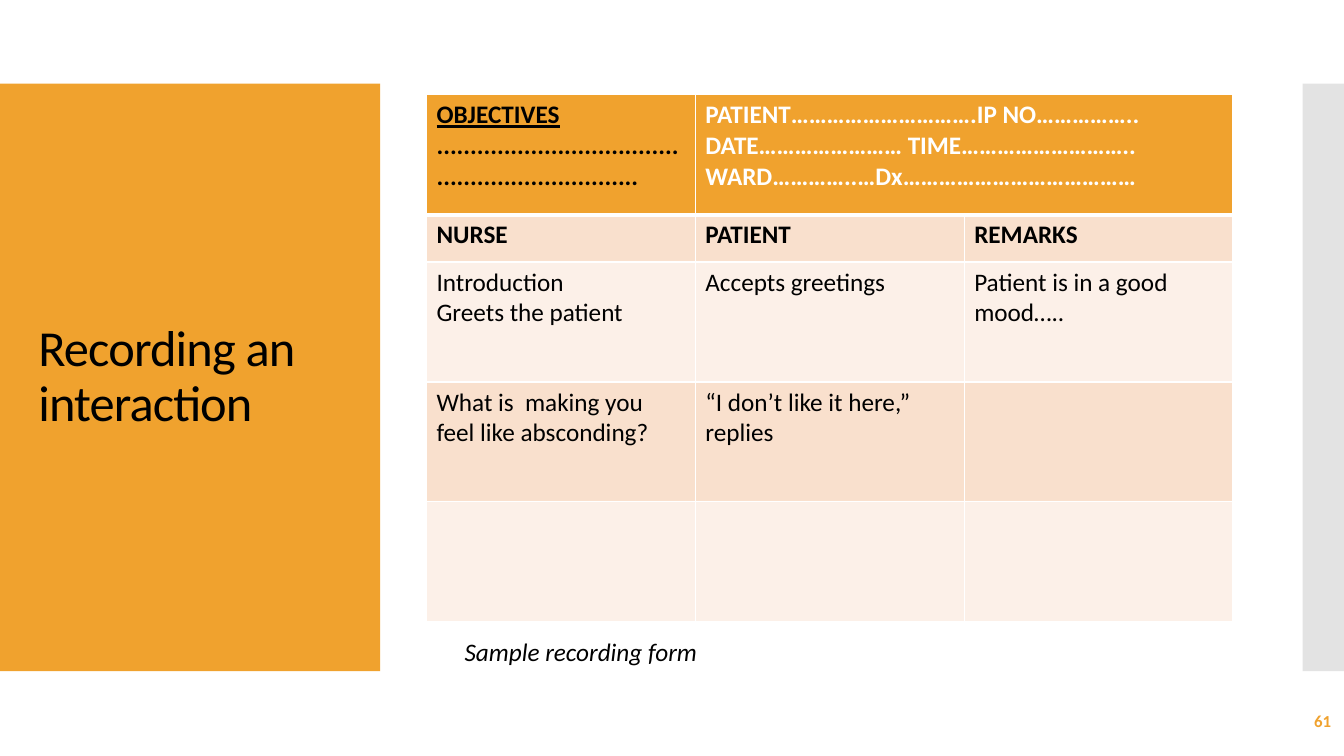
from lxml import etree
from pptx import Presentation
from pptx.dml.color import RGBColor
from pptx.enum.shapes import MSO_SHAPE
from pptx.enum.text import MSO_ANCHOR, PP_ALIGN
from pptx.oxml.ns import qn
from pptx.util import Inches, Pt

RECTANGLE = MSO_SHAPE.RECTANGLE
TOP, MIDDLE = MSO_ANCHOR.TOP, MSO_ANCHOR.MIDDLE
LEFT, RIGHT = PP_ALIGN.LEFT, PP_ALIGN.RIGHT
TITLE_ONLY = 5

ORANGE = RGBColor(0xF0, 0xA2, 0x2E)
GREY = RGBColor(0xC8, 0xC8, 0xC8)
PEACH = RGBColor(0xF9, 0xE0, 0xCD)
PALE_PEACH = RGBColor(0xFC, 0xF0, 0xE8)
BLACK = RGBColor(0, 0, 0)
WHITE = RGBColor(0xFF, 0xFF, 0xFF)

TITLE = "Recording an interaction"
CAPTION = "Sample recording form"
PAGE_NUMBER = "61"
FORM = [
    [["OBJECTIVES", ".................................................................."],
     ["PATIENT………………………….IP NO……………..",
      "DATE…………………… TIME………………………..",
      "WARD…………..…Dx…………………………………"],
     []],
    [["NURSE"], ["PATIENT"], ["REMARKS"]],
    [["Introduction", "Greets the patient"], ["Accepts greetings"],
     ["Patient is in a good mood….."]],
    [["What is  making you feel like absconding?"],
     ["“I don’t like it here,” replies"], []],
    [[], [], []],
]
COLUMN_WIDTH = 8 / 3
ROW_HEIGHTS = [1.19, 0.47, 1.19, 1.19, 1.19]
PANELS = [(0, 3.77, ORANGE, 100), (12.92, 0.42, GREY, 50)]


def set_font(font, color=BLACK, **values):
    font.color.rgb = color
    for name, value in {"name": "Calibri", "size": Pt(18), **values}.items():
        setattr(font, name, value)


def fill_frame(frame, lines, align=LEFT, **font_values):
    for index, line in enumerate(lines):
        para = frame.paragraphs[0] if index == 0 else frame.add_paragraph()
        para.alignment = align
        span = para.add_run()
        span.text = line
        set_font(span.font, **font_values)


def add_panel(page, left, width, color, opacity):
    panel = page.shapes.add_shape(
        RECTANGLE, Inches(left), Inches(0.83), Inches(width), Inches(5.83))
    panel.shadow.inherit = False
    panel.fill.solid()
    panel.fill.fore_color.rgb = color
    panel.line.fill.background()
    if opacity < 100:
        swatch = panel.fill._xPr.find(".//" + qn("a:srgbClr"))
        etree.SubElement(swatch, qn("a:alpha"), val=str(opacity * 1000))


def set_borders(cell, bottom_width):
    properties = cell._tc.get_or_add_tcPr()
    widths = {"lnL": 1, "lnR": 1, "lnT": 1, "lnB": bottom_width}
    for index, (side, width) in enumerate(widths.items()):
        line = etree.Element(qn("a:" + side), w=str(Pt(width)))
        fill = etree.SubElement(line, qn("a:solidFill"))
        etree.SubElement(fill, qn("a:srgbClr"), val=str(WHITE))
        properties.insert(index, line)


def add_form(page):
    table = page.shapes.add_table(
        len(FORM), len(FORM[0]), Inches(4.23), Inches(0.94),
        Inches(8), Inches(sum(ROW_HEIGHTS))).table
    for column in table.columns:
        column.width = Inches(COLUMN_WIDTH)
    for row_index, row in enumerate(FORM):
        table.rows[row_index].height = Inches(ROW_HEIGHTS[row_index])
        header = row_index == 0
        band = PEACH if row_index % 2 else PALE_PEACH
        for column_index, lines in enumerate(row):
            cell = table.cell(row_index, column_index)
            cell.fill.solid()
            cell.fill.fore_color.rgb = ORANGE if header else band
            set_borders(cell, 3 if header else 1)
            color = WHITE if header and column_index else BLACK
            fill_frame(cell.text_frame, lines, color=color, bold=row_index < 2)
    table.cell(0, 1).merge(table.cell(0, 2))
    objectives = table.cell(0, 0).text_frame.paragraphs[0].runs[0]
    objectives.font.underline = True


def add_label(page, text, left, top, width, anchor=TOP, **values):
    box = page.shapes.add_textbox(
        Inches(left), Inches(top), Inches(width), Inches(0.4))
    box.text_frame.word_wrap = True
    box.text_frame.vertical_anchor = anchor
    fill_frame(box.text_frame, [text], **values)


def place_title(page):
    title = page.shapes.title
    title.left, title.top = Inches(0.28), Inches(1.23)
    title.width, title.height = Inches(3.22), Inches(5.03)
    title.text_frame.vertical_anchor = MIDDLE
    fill_frame(title.text_frame, [TITLE], size=Pt(36))
    para = title.text_frame.paragraphs[0]
    para.line_spacing = 0.9
    para.runs[0].font._element.set("spc", "-60")
    page.shapes._spTree.append(title._element)  # bring in front of the panel


def main():
    deck = Presentation()
    deck.slide_width, deck.slide_height = Inches(13.33), Inches(7.5)
    page = deck.slides.add_slide(deck.slide_layouts[TITLE_ONLY])
    for panel in PANELS:
        add_panel(page, *panel)
    place_title(page)
    add_form(page)
    add_label(page, CAPTION, 4.51, 6.26, 4.07, italic=True)
    add_label(page, PAGE_NUMBER, 11.63, 6.95, 1.67, anchor=MIDDLE,
              align=RIGHT, color=ORANGE, size=Pt(12), bold=True)
    deck.save("out.pptx")


if __name__ == "__main__":
    main()
